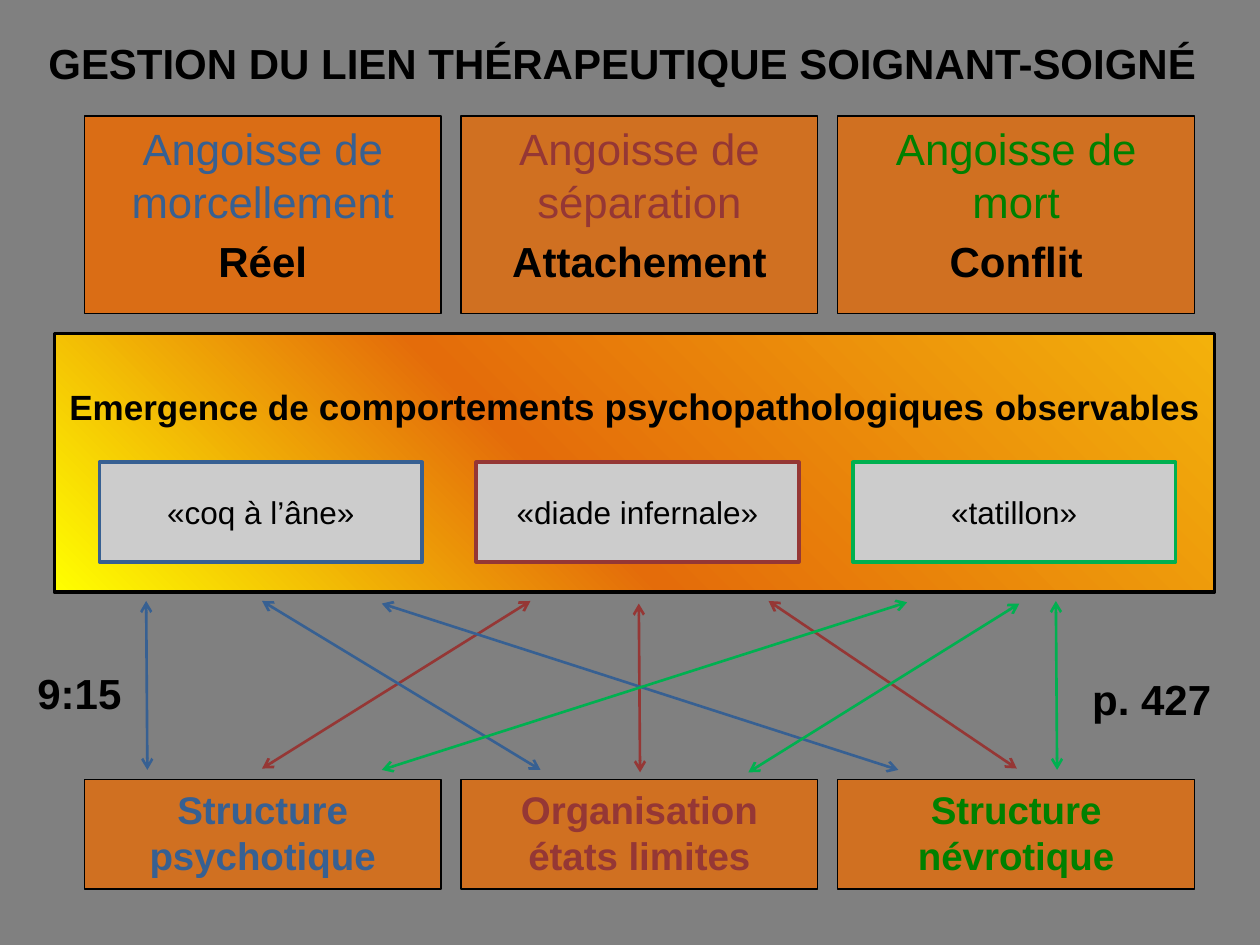
from dataclasses import dataclass

import pptx
import pptx.util
import pptx.dml.color
import pptx.enum.shapes
import pptx.enum.text
import pptx.oxml
import pptx.oxml.ns

WIDE, HIGH = pptx.util.Inches(10), pptx.util.Inches(7.5)
BLUE, RED, GREEN, LEAF = "376092", "953735", "00B050", "008000"
BLACK, ORANGE, GREY = "000000", "E46C0A", "CCCCCC"
LEFT, PITCH = 6.7, 29.9  # column grid, percent of slide width
CENTER = pptx.enum.text.PP_ALIGN.CENTER
TOP = pptx.enum.text.MSO_ANCHOR.TOP
MIDDLE = pptx.enum.text.MSO_ANCHOR.MIDDLE
RECT = pptx.enum.shapes.MSO_SHAPE.RECTANGLE
STRAIGHT = pptx.enum.shapes.MSO_CONNECTOR.STRAIGHT


@dataclass
class Area:
    """A place in percent of the slide's size."""
    x: float
    y: float
    w: float
    h: float

    def emu(self) -> tuple:
        return across(self.x), down(self.y), across(self.w), down(self.h)


@dataclass
class Run:
    text: str
    size: float
    color: str = BLACK
    bold: bool = False


@dataclass
class Theme:
    """One column of the slide, from anxiety down to structure."""
    fear: str
    key: str
    habit: str
    base: str
    ink: str
    edge: str
    alpha: int


@dataclass
class Arrow:
    x1: float
    y1: float
    x2: float
    y2: float
    color: str


THEMES = [
    Theme("Angoisse de morcellement", "Réel", "«coq à l’âne»",
          "Structure psychotique", BLUE, BLUE, 90),
    Theme("Angoisse de séparation", "Attachement", "«diade infernale»",
          "Organisation états limites", RED, RED, 80),
    Theme("Angoisse de mort", "Conflit", "«tatillon»",
          "Structure névrotique", LEAF, GREEN, 80),
]
ARROWS = [
    Arrow(50.7, 63.87, 50.8, 81.73, RED),
    Arrow(42.1, 63.6, 20.8, 81.33, RED),
    Arrow(61, 63.6, 80.7, 81.33, RED),
    Arrow(11.6, 63.6, 11.7, 81.47, BLUE),
    Arrow(20.8, 63.6, 42.9, 81.47, BLUE),
    Arrow(30.3, 63.87, 71.3, 81.47, BLUE),
    Arrow(83.8, 63.6, 83.9, 81.47, GREEN),
    Arrow(80.9, 63.87, 59.4, 81.73, GREEN),
    Arrow(72, 63.73, 30.3, 81.47, GREEN),
]


def across(part: float) -> int:
    return int(WIDE * part / 100)


def down(part: float) -> int:
    return int(HIGH * part / 100)


def rgb(code: str):
    return pptx.dml.color.RGBColor.from_string(code)


def node(tag: str, attrs: str = ""):
    space = pptx.oxml.ns.nsdecls("a")
    return pptx.oxml.parse_xml(f"<a:{tag} {space} {attrs}/>")


def format_all(item, values: dict) -> None:
    for name, value in values.items():
        setattr(item, name, value)


def move(shape, area: Area) -> None:
    names = ("left", "top", "width", "height")
    format_all(shape, dict(zip(names, area.emu())))


def write(shape, lines: list, anchor=TOP, align=CENTER) -> None:
    """Fill a shape with paragraphs, each a list of runs."""
    frame = shape.text_frame
    format_all(frame, {"word_wrap": True, "vertical_anchor": anchor,
                       "auto_size": pptx.enum.text.MSO_AUTO_SIZE.NONE})
    for i, runs in enumerate(lines):
        para = frame.add_paragraph() if i else frame.paragraphs[0]
        gap = pptx.util.Pt(runs[0].size * 0.2 if i else 0)
        format_all(para, {"alignment": align, "space_before": gap})
        for run in runs:
            piece = para.add_run()
            piece.text = run.text
            format_all(piece.font, {"name": "Arial", "bold": run.bold,
                                    "size": pptx.util.Pt(run.size)})
            piece.font.color.rgb = rgb(run.color)


def paint(shape, fill: str, edge: str, width: float, alpha: int = 100) -> None:
    shape.fill.solid()
    shape.fill.fore_color.rgb = rgb(fill)
    if alpha < 100:
        tint = shape.fill._xPr.find(".//" + pptx.oxml.ns.qn("a:srgbClr"))
        tint.append(node("alpha", f'val="{alpha * 1000}"'))
    shape.line.color.rgb = rgb(edge)
    shape.line.width = pptx.util.Pt(width)


def add_box(slide, area: Area):
    box = slide.shapes.add_shape(RECT, *area.emu())
    box.shadow.inherit = False
    return box


def add_band(slide) -> None:
    band = add_box(slide, Area(4.3, 35.33, 92.1, 27.33))
    paint(band, ORANGE, BLACK, 1.75)
    band.fill.gradient()
    band.fill.gradient_angle = 225
    stops = band.fill._xPr.find(".//" + pptx.oxml.ns.qn("a:gsLst"))
    for stop in list(stops):
        stops.remove(stop)
    for spot, color in ((0, "F3B10B"), (57, ORANGE), (100, "FFFF00")):
        stop = node("gs", f'pos="{spot * 1000}"')
        stop.append(node("srgbClr", f'val="{color}"'))
        stops.append(stop)
    write(band, [[Run("Emergence de ", 20, bold=True),
                  Run("comportements psychopathologiques ", 21, bold=True),
                  Run("observables", 20, bold=True)]])
    band.text_frame.margin_top = pptx.util.Inches(0.4)


def add_theme(slide, col: int, theme: Theme) -> None:
    left = LEFT + PITCH * col
    area = Area(left, 12.27, 28.3, 20.93)
    if col:
        head = add_box(slide, area)
    else:
        head = slide.placeholders[1]
        move(head, area)
    paint(head, ORANGE, BLACK, 0.75, theme.alpha)
    write(head, [[Run(theme.fear, 25, theme.ink)],
                 [Run(theme.key, 24, bold=True)]])
    habit = add_box(slide, Area(left + 1.2, 48.93, 25.6, 10.53))
    paint(habit, GREY, theme.edge, 2.25)
    write(habit, [[Run(theme.habit, 18)]], MIDDLE)
    base = add_box(slide, Area(left, 82.5, 28.3, 11.6))
    paint(base, ORANGE, BLACK, 0.75, 80)
    write(base, [[Run(theme.base, 22, theme.ink, True)]])


def add_arrow(slide, arrow: Arrow) -> None:
    link = slide.shapes.add_connector(
        STRAIGHT, across(arrow.x1), down(arrow.y1),
        across(arrow.x2), down(arrow.y2))
    link.line.color.rgb = rgb(arrow.color)
    link.line.width = pptx.util.Pt(1.5)
    for tag in ("headEnd", "tailEnd"):
        link.line._get_or_add_ln().append(node(tag, 'type="arrow"'))
    link._element.spPr.append(node("effectLst"))


def add_note(slide, area: Area, text: str, align):
    note = slide.shapes.add_textbox(*area.emu())
    write(note, [[Run(text, 24, bold=True)]], align=align)
    return note


def main() -> None:
    deck = pptx.Presentation()
    format_all(deck, {"slide_width": WIDE, "slide_height": HIGH})
    slide = deck.slides.add_slide(deck.slide_layouts[0])
    slide.background.fill.solid()
    slide.background.fill.fore_color.rgb = rgb("808080")
    title = slide.shapes.title
    move(title, Area(0, -4.13, 98.8, 21.47))
    write(title, [[Run("GESTION DU LIEN THÉRAPEUTIQUE SOIGNANT-SOIGNÉ",
                       24, bold=True)]], MIDDLE)
    add_band(slide)
    for col, theme in enumerate(THEMES):
        add_theme(slide, col, theme)
    for arrow in ARROWS:
        add_arrow(slide, arrow)
    page = add_note(slide, Area(85.7, 68.53, 13.5, 8.53), "p. 427",
                    pptx.enum.text.PP_ALIGN.LEFT)
    page.text_frame.paragraphs[0].line_spacing = 1.4
    add_note(slide, Area(0.4, 70, 11.8, 6.67), "9:15", CENTER)
    deck.save("out.pptx")


if __name__ == "__main__":
    main()
